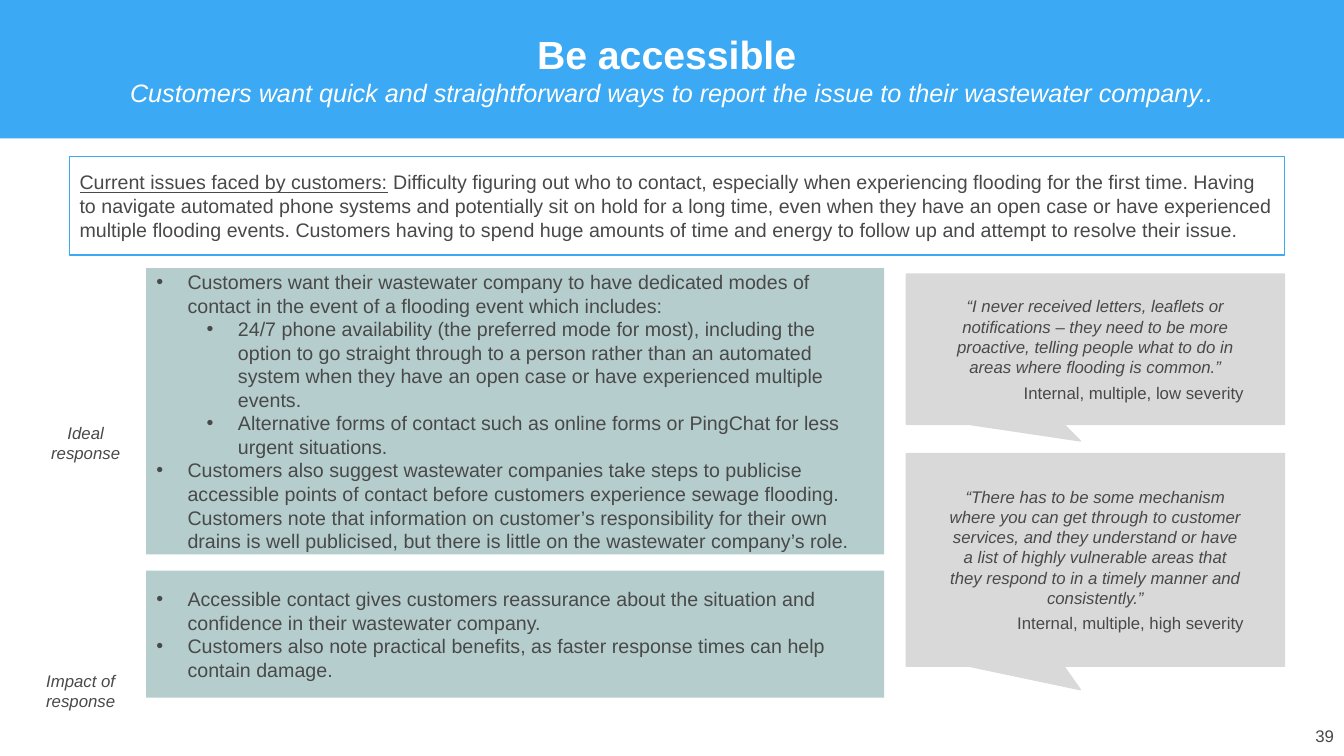
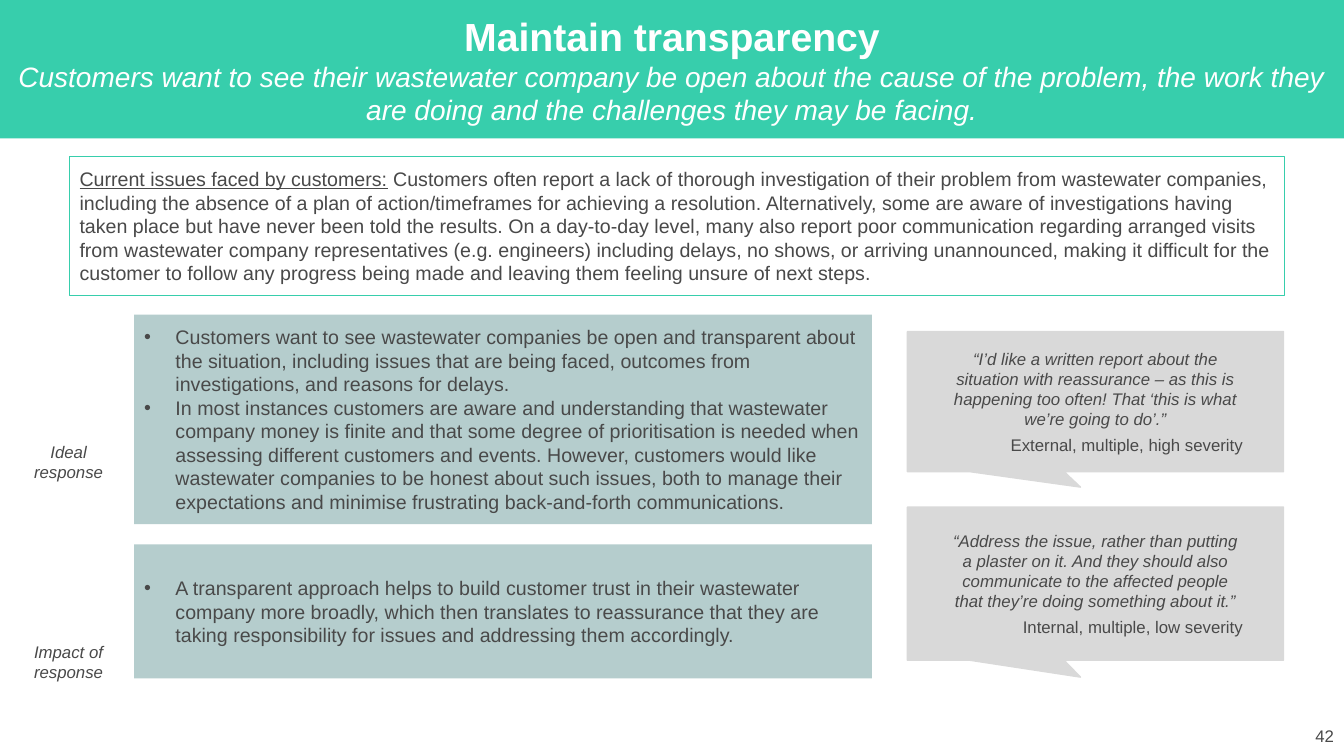
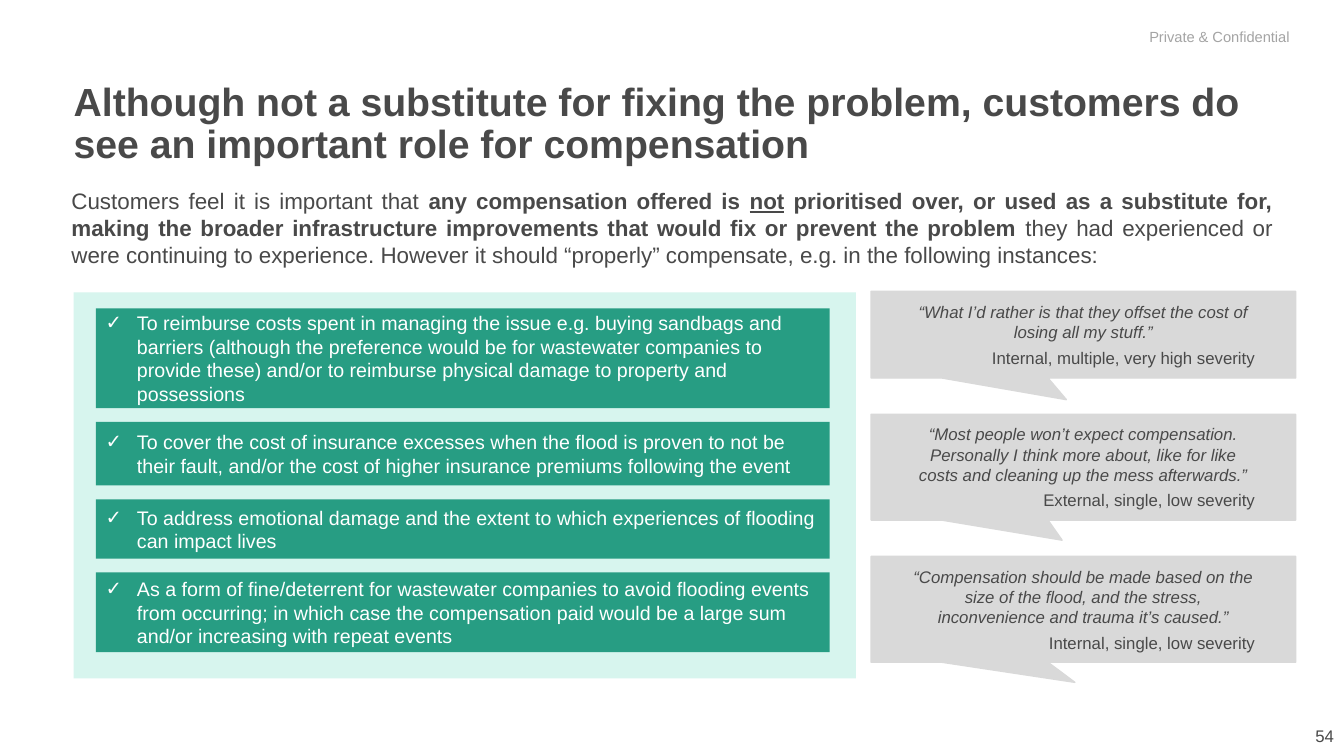
from dataclasses import dataclass

from lxml.etree import SubElement
from pptx import Presentation
from pptx.dml.color import RGBColor as Rgb
from pptx.enum.shapes import MSO_SHAPE as Kind
from pptx.enum.text import MSO_ANCHOR as Anchor, MSO_AUTO_SIZE as Fit, PP_ALIGN as Align
from pptx.oxml.ns import qn
from pptx.util import Inches, Pt


@dataclass(frozen=True)
class Theme:
    font: str = "Arial"
    text: str = "494949"
    white: str = "FFFFFF"
    grey: str = "A4A4A4"
    blue: str = "3BA9F3"
    mint: str = "37CEAC"
    pale: str = "D7F5EE"
    green: str = "279D83"
    sage: str = "B5CDCD"
    quote: str = "D9D9D9"
    head: float = 28
    lead: float = 16
    body: float = 14
    small: float = 12
    tiny: float = 10.5


T = Theme()
WIDE, HIGH = Inches(13.33), Inches(7.5)
HANG = Inches(0.31)
STEP = Inches(0.5)
TAIL = (-0.04, 0.61)


def scale(area):
    """Turn percent shares of the slide into lengths."""
    return [round(share * full / 100) for share, full in zip(area, (WIDE, HIGH) * 2)]


def stack(left, top, width, heights, gap):
    """Yield areas one below the other with an equal gap."""
    for height in heights:
        yield left, top, width, height
        top += height + gap


def place(shape, area):
    shape.left, shape.top, shape.width, shape.height = scale(area)


def paint(shape, color):
    shape.fill.solid()
    shape.fill.fore_color.rgb = Rgb.from_string(color)


def prep(frame, anchor=Anchor.MIDDLE):
    frame.word_wrap = True
    frame.auto_size = Fit.NONE
    frame.vertical_anchor = anchor


def write(frame, parts, size, color=T.text, align=Align.LEFT):
    """Add a paragraph of (text, marks) parts; marks are letters of "biu"."""
    par = frame.paragraphs[0]
    if par.runs:
        par = frame.add_paragraph()
    par.alignment = align
    par.space_before = Pt(0)
    for text, marks in parts:
        run = par.add_run()
        run.text = text
        font = run.font
        font.name, font.size = T.font, Pt(size)
        font.color.rgb = Rgb.from_string(color)
        font.bold, font.italic, font.underline = (m in marks for m in "biu")
    return par


def bullet(par, sign="•", level=0):
    par.level = level
    props = par._p.get_or_add_pPr()
    props.set("marL", str(HANG + level * STEP))
    props.set("indent", str(-HANG))
    SubElement(props, qn("a:buFont")).set("typeface", T.font)
    SubElement(props, qn("a:buChar")).set("char", sign)


def block(slide, area, fill=None, line=None, kind=Kind.RECTANGLE):
    shape = slide.shapes.add_shape(kind, *scale(area))
    shape.shadow.inherit = False
    if fill:
        paint(shape, fill)
    else:
        shape.fill.background()
    if line:
        shape.line.color.rgb = Rgb.from_string(line)
        shape.line.width = Pt(1)
    else:
        shape.line.fill.background()
    prep(shape.text_frame)
    return shape


def label(slide, area, parts, size, color=T.text, align=Align.CENTER, anchor=Anchor.MIDDLE):
    frame = slide.shapes.add_textbox(*scale(area)).text_frame
    prep(frame, anchor)
    write(frame, parts, size, color, align)


def start(deck, layout, page):
    slide = deck.slides.add_slide(deck.slide_layouts.get_by_name(layout))
    label(slide, (77.5, 94.67, 22.5, 5.33), [(page, "")], T.small, align=Align.RIGHT)
    return slide


def band(slide, color, title, line, size):
    """Fill the title placeholder as a band across the top."""
    head = slide.shapes.title
    place(head, (0, 0, 100, 18.3))
    paint(head, color)
    prep(head.text_frame)
    write(head.text_frame, [(title, "b")], T.head, T.white, Align.CENTER)
    write(head.text_frame, [(line, "i")], size, T.white, Align.CENTER)


def issues(slide, color, height, text):
    frame = block(slide, (5.18, 20.67, 90.4, height), line=color).text_frame
    write(frame, [("Current issues faced by customers:", "u"), (" " + text, "")], T.body)


def lists(slide, areas, groups):
    """Fill the body placeholders with lists of (level, text)."""
    for slot, area, items in zip((1, 2), areas, groups):
        body = slide.placeholders[slot]
        place(body, area)
        paint(body, T.sage)
        prep(body.text_frame)
        for level, text in items:
            bullet(write(body.text_frame, [(text, "")], T.body), level=level)


def sides(slide, *spots):
    for text, spot in zip(("Ideal response", "Impact of response"), spots):
        label(slide, (*spot, 7.05, 6.67), [(text, "i")], T.small, anchor=Anchor.TOP)


def quotes(slide, areas, items):
    """Draw callouts of (words, source, tail)."""
    for area, (words, source, tail) in zip(areas, items):
        shape = block(slide, area, T.quote, T.quote, Kind.RECTANGULAR_CALLOUT)
        shape.adjustments[0], shape.adjustments[1] = tail
        frame = shape.text_frame
        frame.margin_left = frame.margin_right = Inches(0.4)
        frame.margin_top = frame.margin_bottom = Inches(0.39)
        write(frame, [(words, "i")], T.small, align=Align.CENTER).space_after = Pt(2)
        par = write(frame, [(source, "")], T.small, align=Align.RIGHT)
        par.space_before = par.space_after = Pt(2)


def access(deck):
    slide = start(deck, "Two Content", "39")
    band(slide, T.blue, "Be accessible ",
         "Customers want quick and straightforward ways to report the issue to their "
         "wastewater company..", 18)
    issues(slide, T.blue, 13.07,
           "Difficulty figuring out who to contact, especially when experiencing flooding for "
           "the first time. Having to navigate automated phone systems and potentially sit on "
           "hold for a long time, even when they have an open case or have experienced multiple "
           "flooding events. Customers having to spend huge amounts of time and energy to follow "
           "up and attempt to resolve their issue.")
    lists(slide, stack(10.88, 35.47, 54.9, (37.87, 16.8), 2.13), [
        [(0, "Customers want their wastewater company to have dedicated modes of contact in the "
             "event of a flooding event which includes:"),
         (1, "24/7 phone availability (the preferred mode for most), including the option to go "
             "straight through to a person rather than an automated system when they have an "
             "open case or have experienced multiple events."),
         (1, "Alternative forms of contact such as online forms or PingChat for less urgent "
             "situations."),
         (0, "Customers also suggest wastewater companies take steps to publicise accessible "
             "points of contact before customers experience sewage flooding. Customers note that "
             "information on customer’s responsibility for their own drains is well publicised, "
             "but there is little on the wastewater company’s role.")],
        [(0, "Accessible contact gives customers reassurance about the situation and confidence "
             "in their wastewater company."),
         (0, "Customers also note practical benefits, as faster response times can help contain "
             "damage.")]])
    sides(slide, (2.85, 55.2), (2.48, 88))
    quotes(slide, stack(67.44, 36.27, 28.13, (19.87, 28.13), 3.86), [
        ("“I never received letters, leaflets or notifications – they need to be more proactive, "
         "telling people what to do in areas where flooding is common.”",
         "Internal, multiple, low severity", TAIL),
        ("“There has to be some mechanism where you can get through to customer services, and "
         "they understand or have a list of highly vulnerable areas that they respond to in a "
         "timely manner and consistently.”",
         "Internal, multiple, high severity", TAIL)])


def openness(deck):
    slide = start(deck, "Two Content", "42")
    band(slide, T.mint, "Maintain transparency",
         "Customers want to see their wastewater company be open about the cause of the problem, "
         "the work they are doing and the challenges they may be facing.", 20)
    issues(slide, T.mint, 18.4,
           "Customers often report a lack of thorough investigation of their problem from "
           "wastewater companies, including the absence of a plan of action/timeframes for "
           "achieving a resolution. Alternatively, some are aware of investigations having taken "
           "place but have never been told the results. On a day-to-day level, many also report "
           "poor communication regarding arranged visits from wastewater company representatives "
           "(e.g. engineers) including delays, no shows, or arriving unannounced, making it "
           "difficult for the customer to follow any progress being made and leaving them feeling "
           "unsure of next steps.")
    lists(slide, stack(9.98, 41.6, 54.9, (27.73, 17.73), 2.67), [
        [(0, "Customers want to see wastewater companies be open and transparent about the "
             "situation, including issues that are being faced, outcomes from investigations, "
             "and reasons for delays."),
         (0, "In most instances customers are aware and understanding that wastewater company "
             "money is finite and that some degree of prioritisation is needed when assessing "
             "different customers and events. However, customers would like wastewater companies "
             "to be honest about such issues, both to manage their expectations and minimise "
             "frustrating back-and-forth communications.")],
        [(0, "A transparent approach helps to build customer trust in their wastewater company "
             "more broadly, which then translates to reassurance that they are taking "
             "responsibility for issues and addressing them accordingly.")]])
    sides(slide, (1.58, 57.73), (1.58, 84.27))
    quotes(slide, stack(67.52, 43.87, 27.98, (18.53, 20.27), 4.67), [
        ("“I’d like a written report about the situation with reassurance – as this is happening "
         "too often! That ‘this is what we’re going to do’.”",
         "External, multiple, high severity", TAIL),
        ("“Address the issue, rather than putting a plaster on it. And they should also "
         "communicate to the affected people that they’re doing something about it.”",
         "Internal, multiple, low severity", TAIL)])


def payment(deck):
    slide = start(deck, "Title Only", "54")
    label(slide, (84.77, 2.53, 12.23, 4.67), [("Private & Confidential", "")],
          T.tiny, T.grey, Align.LEFT)
    head = slide.shapes.title
    place(head, (5.48, 10.27, 88.15, 11.6))
    prep(head.text_frame, Anchor.TOP)
    head.text_frame.margin_left = 0
    write(head.text_frame, [("Although not a substitute for fixing the problem, customers do see "
                             "an important role for compensation", "b")],
          T.head).line_spacing = 0.9
    label(slide, (4.58, 23.2, 90.85, 13.73), [
        ("Customers feel it is important that ", ""),
        ("any compensation offered is ", "b"),
        ("not", "bu"),
        (" prioritised over, or used as a substitute for, making the broader infrastructure "
         "improvements that would fix or prevent the problem ", "b"),
        ("they had experienced or were continuing to experience. However it should “properly” "
         "compensate, e.g. in the following instances:", "")], T.lead, align=Align.JUSTIFY)
    block(slide, (5.48, 38.67, 58.2, 51.07), T.pale)
    reasons = (
        "To reimburse costs spent in managing the issue e.g. buying sandbags and barriers "
        "(although the preference would be for wastewater companies to provide these) and/or to "
        "reimburse physical damage to property and possessions",
        "To cover the cost of insurance excesses when the flood is proven to not be their fault, "
        "and/or the cost of higher insurance premiums following the event",
        "To address emotional damage and the extent to which experiences of flooding can impact "
        "lives",
        "As a form of fine/deterrent for wastewater companies to avoid flooding events from "
        "occurring; in which case the compensation paid would be a large sum and/or increasing "
        "with repeat events")
    for area, text in zip(stack(7.13, 40.8, 54.61, (13.2, 8.4, 7.87, 10.53), 1.82), reasons):
        frame = block(slide, area, T.green).text_frame
        bullet(write(frame, [(text, "")], T.body, T.white), "✓")
    quotes(slide, stack(64.82, 38.53, 31.58, (11.47, 14, 14), 4.8), [
        ("“What I’d rather is that they offset the cost of losing all my stuff.”",
         "Internal, multiple, very high severity", (-0.04, 0.75)),
        ("“Most people won’t expect compensation. Personally I think more about, like for like "
         "costs and cleaning up the mess afterwards.”",
         "External, single, low severity", (-0.05, 0.69)),
        ("“Compensation should be made based on the size of the flood, and the stress, "
         "inconvenience and trauma it’s caused.”",
         "Internal, single, low severity", (-0.02, 0.69))])


def main():
    deck = Presentation()
    deck.slide_width, deck.slide_height = WIDE, HIGH
    access(deck)
    openness(deck)
    payment(deck)
    deck.save("out.pptx")


if __name__ == "__main__":
    main()
